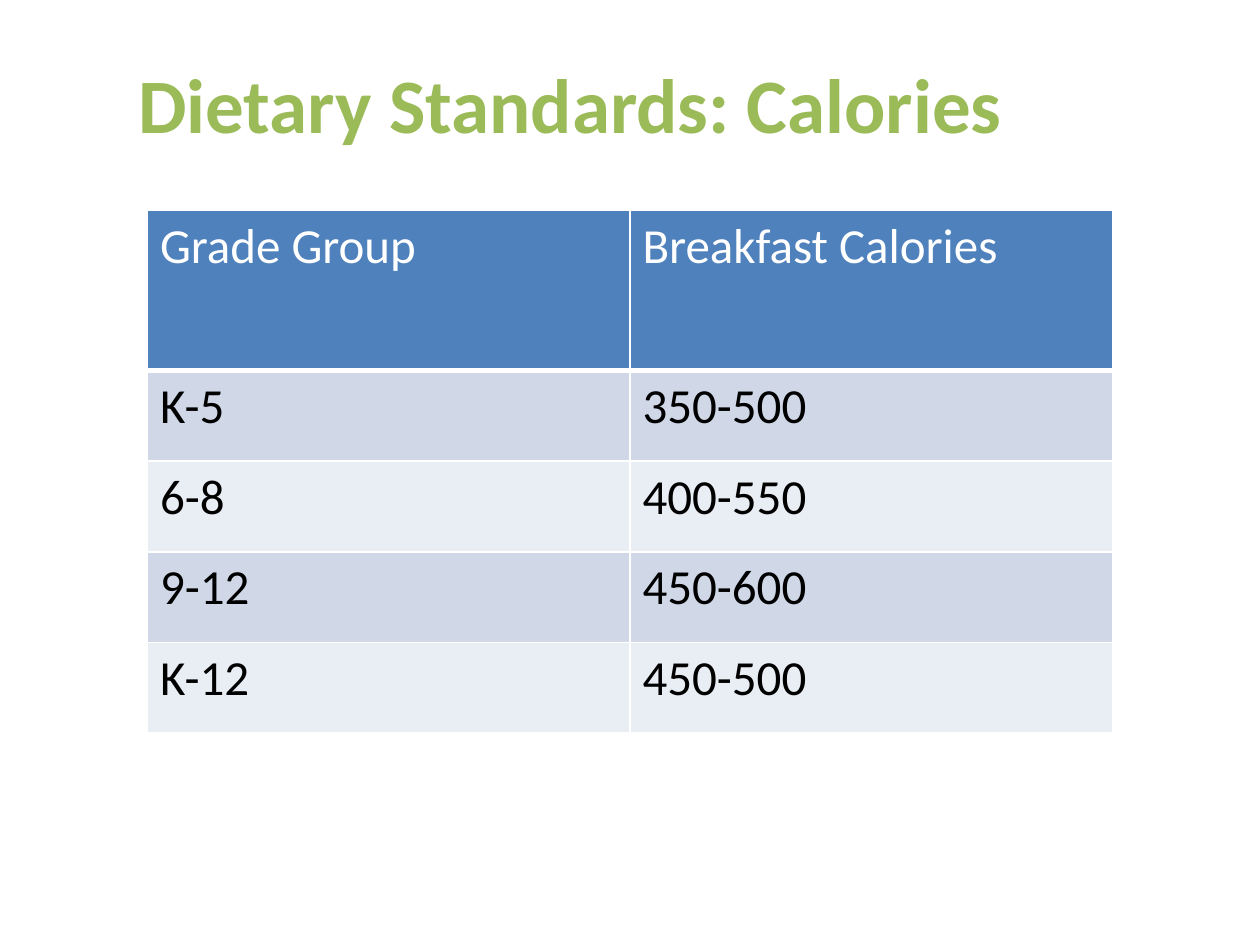
from dataclasses import dataclass

from lxml.etree import SubElement
from pptx import Presentation
from pptx.dml.color import RGBColor as RGB
from pptx.enum.text import MSO_ANCHOR as Anchor
from pptx.oxml.ns import qn
from pptx.util import Inches, Pt


@dataclass(frozen=True)
class Theme:
    font: str = "Calibri"
    title_size: int = 44
    cell_size: int = 28
    green: str = "9BBB59"
    blue: str = "4F81BD"
    bands: tuple = ("D0D8E8", "E9EDF4")
    white: str = "FFFFFF"
    black: str = "000000"


THEME = Theme()
ROWS = [
    ("Grade Group", "Breakfast Calories"),
    ("K-5", "350-500"),
    ("6-8", "400-550"),
    ("9-12", "450-600"),
    ("K-12", "450-500"),
]
HEADER_HEIGHT, ROW_HEIGHT, COLUMN_WIDTH = 1.27, 0.72, 3.83


def write(frame, text, size, color, bold=False):
    span = frame.paragraphs[0].add_run()
    span.text = text
    for name, value in {"name": THEME.font, "size": Pt(size), "bold": bold}.items():
        setattr(span.font, name, value)
    span.font.color.rgb = RGB.from_string(color)


def add_borders(cell, bottom_width):
    properties = cell._tc.get_or_add_tcPr()
    for side, width in {"L": 1, "R": 1, "T": 1, "B": bottom_width}.items():
        line = SubElement(properties, qn(f"a:ln{side}"), w=str(Pt(width)))
        fill = SubElement(line, qn("a:solidFill"))
        SubElement(fill, qn("a:srgbClr"), val=THEME.white)


deck = Presentation()
deck.slide_width, deck.slide_height = Inches(10), Inches(7.5)
page = deck.slides.add_slide(deck.slide_layouts[6])

title = page.shapes.add_textbox(Inches(1), Inches(0.3), Inches(8.5), Inches(1.03)).text_frame
title.word_wrap = True
title.vertical_anchor = Anchor.MIDDLE
write(title, "Dietary Standards: Calories", THEME.title_size, THEME.green, bold=True)

table = page.shapes.add_table(
    len(ROWS), 2, Inches(1.17), Inches(1.67), Inches(2 * COLUMN_WIDTH),
    Inches(HEADER_HEIGHT + ROW_HEIGHT * (len(ROWS) - 1)),
).table
for column in table.columns:
    column.width = Inches(COLUMN_WIDTH)

for index, values in enumerate(ROWS):
    is_header = index == 0
    table.rows[index].height = Inches(HEADER_HEIGHT if is_header else ROW_HEIGHT)
    for cell, text in zip(table.rows[index].cells, values):
        add_borders(cell, bottom_width=3 if is_header else 1)
        cell.fill.solid()
        cell.fill.fore_color.rgb = RGB.from_string(
            THEME.blue if is_header else THEME.bands[(index - 1) % 2])
        write(cell.text_frame, text, THEME.cell_size,
              THEME.white if is_header else THEME.black)

deck.save("out.pptx")
